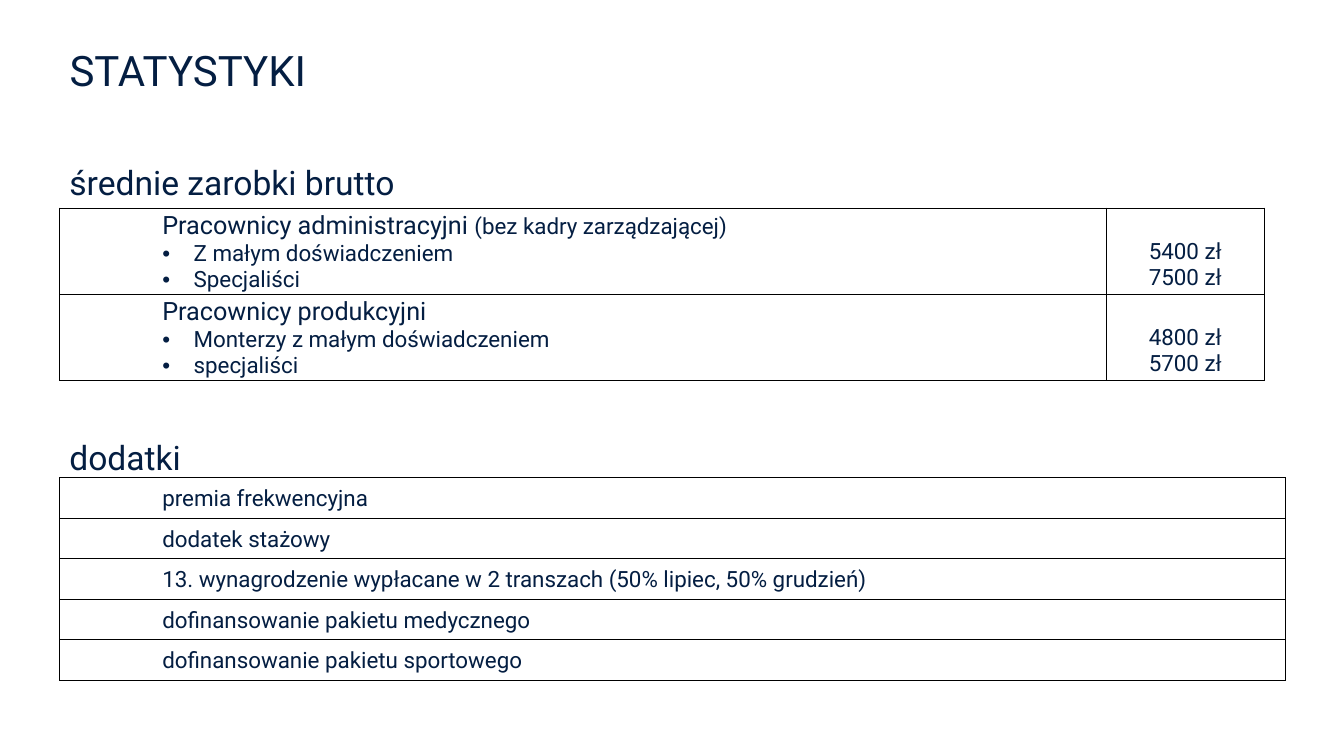
"""Build the slide with average gross pay and benefits."""
from dataclasses import dataclass

from lxml import etree
from pptx import Presentation
from pptx.dml.color import RGBColor
from pptx.enum.text import MSO_ANCHOR, MSO_AUTO_SIZE, PP_ALIGN
from pptx.oxml.ns import qn
from pptx.util import Cm, Pt

TOP, MIDDLE, BOTTOM = MSO_ANCHOR.TOP, MSO_ANCHOR.MIDDLE, MSO_ANCHOR.BOTTOM
LEFT, CENTER = PP_ALIGN.LEFT, PP_ALIGN.CENTER
NO_AUTOFIT = MSO_AUTO_SIZE.NONE

TITLE = "STATYSTYKI"
PAY_HEADING = "średnie zarobki brutto"
PAY_GROUPS = [
    ("Pracownicy administracyjni ", "(bez kadry zarządzającej)",
     [("Z małym doświadczeniem", "5400 zł"), ("Specjaliści", "7500 zł")]),
    ("Pracownicy produkcyjni", "",
     [("Monterzy z małym doświadczeniem", "4800 zł"), ("specjaliści", "5700 zł")]),
]
BENEFITS_HEADING = "dodatki"
BENEFITS = [
    "premia frekwencyjna",
    "dodatek stażowy",
    "13. wynagrodzenie wypłacane w 2 transzach (50% lipiec, 50% grudzień)",
    "dofinansowanie pakietu medycznego",
    "dofinansowanie pakietu sportowego",
]


@dataclass(frozen=True)
class Theme:
    font: str = "Roboto"
    text: RGBColor = RGBColor(0x04, 0x1E, 0x42)
    border: str = "000000"
    border_width: Pt = Pt(0.5)
    title: Pt = Pt(30)
    heading: Pt = Pt(24)
    group: Pt = Pt(18)
    body: Pt = Pt(16)


THEME = Theme()
MARGIN = Cm(1.5)
HEADING_WIDTH = Cm(24.84)
CELL_INSET = Cm(0.05)
TEXT_INDENT = Cm(2.54)
BULLET_HANGING = Cm(0.79)


def style_run(run, size):
    run.font.name = THEME.font
    run.font.size = size
    run.font.color.rgb = THEME.text


def fill_heading(shape, text, top, height, size):
    shape.left, shape.top, shape.width, shape.height = MARGIN, top, HEADING_WIDTH, height
    frame = shape.text_frame
    frame.text = text
    frame.word_wrap = True
    frame.auto_size = NO_AUTOFIT
    frame.vertical_anchor = TOP
    paragraph = frame.paragraphs[0]
    paragraph.alignment = LEFT
    paragraph.line_spacing = 0.9
    style_run(paragraph.runs[0], size)


def add_heading(slide, text, top):
    height = Cm(1.17)
    box = slide.shapes.add_textbox(MARGIN, top, HEADING_WIDTH, height)
    fill_heading(box, text, top, height, THEME.heading)


def indent(paragraph, bulleted=False):
    properties = paragraph._p.get_or_add_pPr()
    hanging = BULLET_HANGING if bulleted else 0
    properties.set("marL", str(TEXT_INDENT + hanging))
    properties.set("indent", str(-hanging))
    if bulleted:
        etree.SubElement(properties, qn("a:buFont"), typeface="Arial")
        etree.SubElement(properties, qn("a:buChar"), char="•")


def add_borders(cell):
    properties = cell._tc.get_or_add_tcPr()
    for position, side in enumerate(("lnL", "lnR", "lnT", "lnB")):
        line = etree.Element(qn(f"a:{side}"), w=str(THEME.border_width))
        fill = etree.SubElement(line, qn("a:solidFill"))
        etree.SubElement(fill, qn("a:srgbClr"), val=THEME.border)
        properties.insert(position, line)


def add_grid(slide, top, column_widths, row_height, row_count):
    table = slide.shapes.add_table(
        row_count, len(column_widths), MARGIN, top,
        sum(column_widths), row_height * row_count).table
    table.first_row = table.horz_banding = False
    for column, width in zip(table.columns, column_widths):
        column.width = width
    for row in table.rows:
        row.height = row_height
        for cell in row.cells:
            cell.margin_left = cell.margin_right = cell.margin_top = CELL_INSET
            cell.margin_bottom = 0
            cell.vertical_anchor = MIDDLE
            cell.fill.background()
            add_borders(cell)
    return table


def fill_pay_group(label_cell, pay_cell, group, note, levels):
    label_cell.text = "\n".join([group] + [level for level, _ in levels])
    heading, *items = label_cell.text_frame.paragraphs
    indent(heading)
    style_run(heading.runs[0], THEME.group)
    if note:
        run = heading.add_run()
        run.text = note
        style_run(run, THEME.body)
    for item in items:
        indent(item, bulleted=True)
        style_run(item.runs[0], THEME.body)

    pay_cell.text = "\n".join(pay for _, pay in levels)
    pay_cell.vertical_anchor = BOTTOM
    pay_cell.margin_bottom = Cm(0.09)
    for paragraph in pay_cell.text_frame.paragraphs:
        paragraph.alignment = CENTER
        style_run(paragraph.runs[0], THEME.body)


def main():
    presentation = Presentation()
    presentation.slide_width, presentation.slide_height = Cm(33.87), Cm(19.05)
    slide = presentation.slides.add_slide(presentation.slide_layouts[5])
    fill_heading(slide.shapes.title, TITLE, Cm(1.14), Cm(1.42), THEME.title)

    add_heading(slide, PAY_HEADING, Cm(4.06))
    pay_table = add_grid(slide, Cm(5.24), [Cm(26.38), Cm(3.98)], Cm(2.17), len(PAY_GROUPS))
    for row, group in zip(pay_table.rows, PAY_GROUPS):
        fill_pay_group(*row.cells, *group)

    add_heading(slide, BENEFITS_HEADING, Cm(11))
    benefits_table = add_grid(slide, Cm(12.04), [Cm(30.89)], Cm(1.02), len(BENEFITS))
    for row, benefit in zip(benefits_table.rows, BENEFITS):
        cell = row.cells[0]
        cell.text = benefit
        paragraph = cell.text_frame.paragraphs[0]
        indent(paragraph)
        style_run(paragraph.runs[0], THEME.body)

    presentation.save("out.pptx")


if __name__ == "__main__":
    main()
